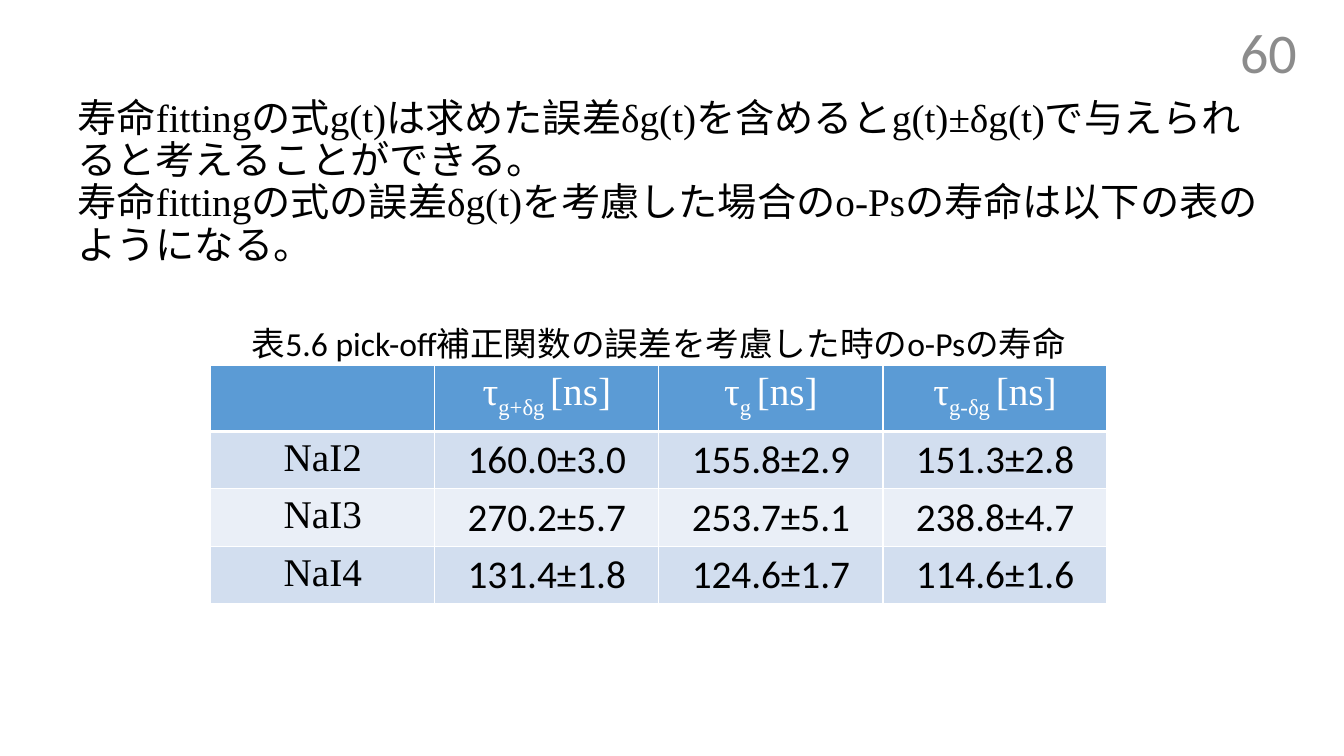
from lxml.etree import SubElement
from pptx import Presentation
from pptx.dml.color import RGBColor
from pptx.enum.text import MSO_ANCHOR, PP_ALIGN
from pptx.oxml.ns import qn
from pptx.util import Inches, Pt

COLORS = {
    "text": "000000",
    "number": "8C8C8C",
    "white": "FFFFFF",
    "header": "5B9BD5",
    "band_dark": "D2DEEF",
    "band_light": "EAEFF7",
}
SERIF = "Times New Roman"
SANS = "Calibri"


class SlideBuilder:
    def __init__(self, slide):
        self.slide = slide

    def run(self, paragraph, text, size, font, color="text", baseline=0):
        run = paragraph.add_run()
        run.text = text
        run.font.size = Pt(size)
        run.font.name = font
        run.font.color.rgb = RGBColor.from_string(COLORS[color])
        if baseline:
            run.font._element.set("baseline", str(baseline * 1000))

    def text(self, box, lines, size, font, color="text", align=PP_ALIGN.LEFT,
             anchor=MSO_ANCHOR.TOP, spacing=1.0):
        frame = self.slide.shapes.add_textbox(*map(Inches, box)).text_frame
        frame.word_wrap = True
        frame.vertical_anchor = anchor
        paragraph = frame.paragraphs[0]
        paragraph.alignment = align
        paragraph.line_spacing = spacing
        for index, line in enumerate(lines):
            if index:
                paragraph.add_line_break()
            self.run(paragraph, line, size, font, color)

    def borders(self, cell, widths):
        properties = cell._tc.get_or_add_tcPr()
        for side, width in widths.items():
            line = SubElement(properties, qn(f"a:ln{side}"), w=str(Pt(width)))
            fill = SubElement(line, qn("a:solidFill"))
            SubElement(fill, qn("a:srgbClr"), val=COLORS["white"])

    def cell(self, cell, runs, size, font, color, fill, widths):
        self.borders(cell, widths)
        cell.fill.solid()
        cell.fill.fore_color.rgb = RGBColor.from_string(COLORS[fill])
        cell.margin_left = cell.margin_right = Inches(0.13)
        cell.margin_top = cell.margin_bottom = Inches(0.05)
        paragraph = cell.text_frame.paragraphs[0]
        paragraph.alignment = PP_ALIGN.CENTER
        for text, baseline in runs:
            self.run(paragraph, text, size, font, color, baseline)

    def table(self, box, header, rows, header_height, row_height, size):
        table = self.slide.shapes.add_table(
            len(rows) + 1, len(header), *map(Inches, box)).table
        for column in table.columns:
            column.width = Inches(box[2] / len(header))
        for index, row in enumerate(table.rows):
            row.height = Inches(row_height if index else header_height)
        for column, runs in enumerate(header):
            self.cell(table.cell(0, column), runs, size, SERIF, "white",
                      "header", {"L": 1, "R": 1, "T": 1, "B": 3})
        for index, values in enumerate(rows, start=1):
            fill = "band_dark" if index % 2 else "band_light"
            widths = {"L": 1, "R": 1, "T": 3 if index == 1 else 1, "B": 1}
            for column, value in enumerate(values):
                self.cell(table.cell(index, column), [(value, 0)], size,
                          SANS if column else SERIF, "text", fill, widths)


def lifetime_heading(subscript):
    return [("τ", 0), (subscript + " ", -25), ("[ns]", 0)]


def main():
    presentation = Presentation()
    presentation.slide_width = Inches(13.33)
    presentation.slide_height = Inches(7.5)
    builder = SlideBuilder(
        presentation.slides.add_slide(presentation.slide_layouts[6]))

    builder.text(
        (0.67, 0.84, 12, 1.95),
        ["寿命fittingの式g(t)は求めた誤差δg(t)を含めるとg(t)±δg(t)で与えられると考えることができる。",
         "寿命fittingの式の誤差δg(t)を考慮した場合のo-Psの寿命は以下の表のようになる。"],
        28, SERIF, anchor=MSO_ANCHOR.MIDDLE, spacing=0.9)

    header = [[]] + [lifetime_heading(name) for name in ("g+δg", "g", "g-δg")]
    lifetimes = [
        ("NaI2", "160.0±3.0", "155.8±2.9", "151.3±2.8"),
        ("NaI3", "270.2±5.7", "253.7±5.1", "238.8±4.7"),
        ("NaI4", "131.4±1.8", "124.6±1.7", "114.6±1.6"),
    ]
    builder.table((2.09, 3.63, 8.89, 2.35), header, lifetimes, 0.65, 0.57, 28)

    builder.text((2.09, 3.15, 8.89, 0.5),
                 ["表5.6 pick-off補正関数の誤差を考慮した時のo-Psの寿命"],
                 24, SANS, align=PP_ALIGN.CENTER)
    builder.text((9.96, 0.31, 3, 0.4), ["60"], 40, SANS, "number",
                 PP_ALIGN.RIGHT, MSO_ANCHOR.MIDDLE)

    presentation.save("out.pptx")


if __name__ == "__main__":
    main()
